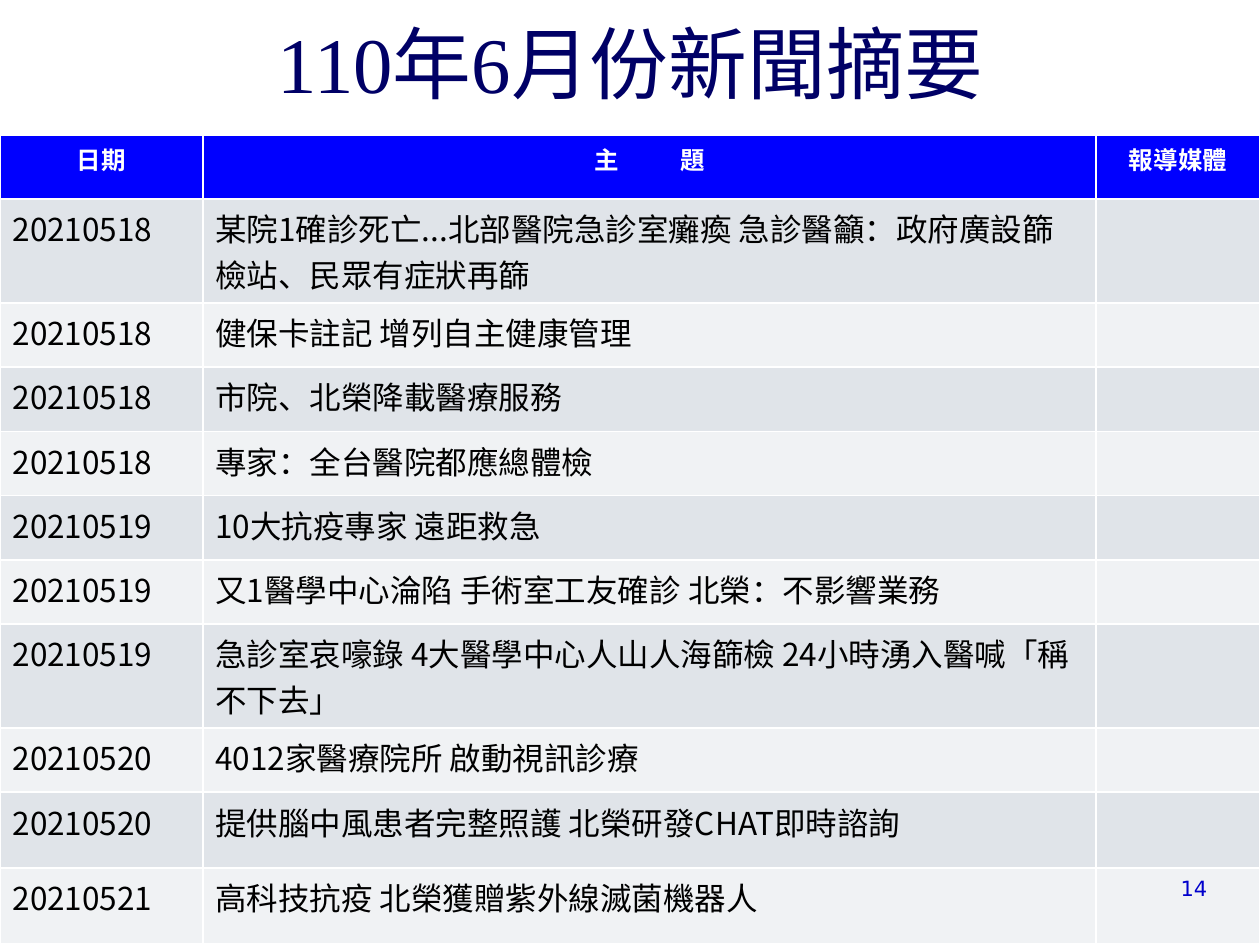
import pptx
import pptx.util
import pptx.dml.color
import pptx.enum.text
from dataclasses import dataclass

Inches = pptx.util.Inches
Align = pptx.enum.text.PP_ALIGN
Anchor = pptx.enum.text.MSO_ANCHOR
Fit = pptx.enum.text.MSO_AUTO_SIZE


@dataclass(frozen=True)
class Theme:
    # Colours
    navy: str = "000066"
    blue: str = "0000FF"
    page: str = "0000CC"
    white: str = "FFFFFF"
    black: str = "000000"
    bands: tuple = ("E0E4E9", "F0F2F4")
    # Fonts and sizes
    serif: str = "Times New Roman"
    sans: str = "Noto Sans CJK SC"
    plain: str = "DejaVu Sans"
    title: int = 45
    head: int = 14
    body: int = 18
    small: int = 12


THEME = Theme()
COLS = (1.61, 7.09, 1.3)
ROWS = (0.51, 0.35) + (0.51,) * 7 + (0.6,) * 2
HEADS = ("日期", "主題", "報導媒體")
NEWS = (
    ("20210518", "某院1確診死亡...北部醫院急診室癱瘓 急診醫籲：政府廣設篩檢站、民眾有症狀再篩"),
    ("20210518", "健保卡註記 增列自主健康管理"),
    ("20210518", "市院、北榮降載醫療服務"),
    ("20210518", "專家：全台醫院都應總體檢"),
    ("20210519", "10大抗疫專家 遠距救急"),
    ("20210519", "又1醫學中心淪陷 手術室工友確診 北榮：不影響業務"),
    ("20210519", "急診室哀嚎錄 4大醫學中心人山人海篩檢 24小時湧入醫喊「稱不下去」"),
    ("20210520", "4012家醫療院所 啟動視訊診療"),
    ("20210520", "提供腦中風患者完整照護 北榮研發CHAT即時諮詢"),
    ("20210521", "高科技抗疫 北榮獲贈紫外線滅菌機器人"),
)


def tint(text):
    return pptx.dml.color.RGBColor.from_string(text)


def style(para, face, size, color, align=Align.LEFT, bold=False):
    para.alignment = align
    font = para.font
    font.name, font.size, font.bold = face, pptx.util.Pt(size), bold
    font.color.rgb = tint(color)


def add_title(slide, text):
    shape = slide.shapes.title
    shape.left, shape.top = Inches(0.63), Inches(0.34)
    shape.width, shape.height = Inches(8.75), Inches(0.58)
    frame = shape.text_frame
    frame.text = text
    frame.auto_size = Fit.NONE
    frame.vertical_anchor = Anchor.BOTTOM
    style(frame.paragraphs[0], THEME.serif, THEME.title, THEME.navy, Align.CENTER)


def fill_cell(cell, text, fill, *look):
    cell.fill.solid()
    cell.fill.fore_color.rgb = tint(fill)
    para = cell.text_frame.paragraphs[0]
    if text:
        para.text = text
    style(para, THEME.sans, *look)


def space_head(para):
    # Letter spacing sets the two characters apart
    first, last = para.text
    para.text = first
    para.runs[0].font._element.set("spc", "3500")
    para.add_run().text = last


def add_news(slide):
    table = slide.shapes.add_table(
        len(ROWS), len(COLS), Inches(0), Inches(1.07),
        Inches(sum(COLS)), Inches(sum(ROWS))).table
    for col, width in zip(table.columns, COLS):
        col.width = Inches(width)
    for row, height in zip(table.rows, ROWS):
        row.height = Inches(height)

    # Header row
    for c, text in enumerate(HEADS):
        fill_cell(table.cell(0, c), text, THEME.blue,
                  THEME.head, THEME.white, Align.CENTER, True)
    space_head(table.cell(0, 1).text_frame.paragraphs[0])

    # News rows in two alternating bands, media column left open
    for r, item in enumerate(NEWS):
        for c, text in enumerate(item + ("",)):
            fill_cell(table.cell(r + 1, c), text, THEME.bands[r % 2],
                      THEME.body, THEME.black)


def add_page(slide, text):
    box = slide.shapes.add_textbox(
        Inches(8.94), Inches(6.9), Inches(0.74), Inches(0.3))
    frame = box.text_frame
    frame.word_wrap = True
    frame.text = text
    style(frame.paragraphs[0], THEME.plain, THEME.small, THEME.page, Align.RIGHT)


def main():
    deck = pptx.Presentation()
    deck.slide_width, deck.slide_height = Inches(10), Inches(7.5)
    slide = deck.slides.add_slide(deck.slide_layouts[5])
    add_title(slide, "110年6月份新聞摘要")
    add_news(slide)
    add_page(slide, "14")
    deck.save("out.pptx")


if __name__ == "__main__":
    main()
